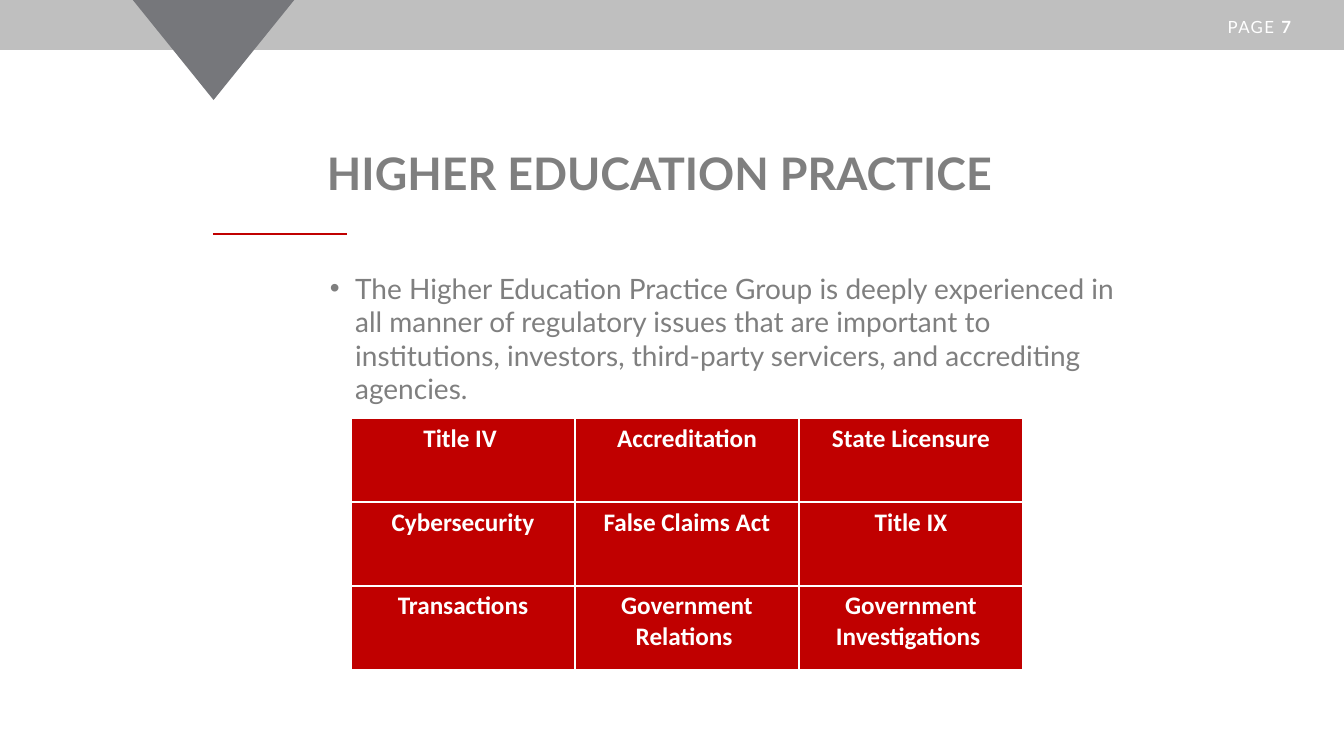
from lxml.etree import SubElement
from pptx import Presentation
from pptx.dml.color import RGBColor
from pptx.enum.shapes import MSO_CONNECTOR, MSO_SHAPE
from pptx.enum.text import MSO_ANCHOR, PP_ALIGN
from pptx.oxml.ns import qn
from pptx.util import Emu, Pt

WHITE = RGBColor(0xFF, 0xFF, 0xFF)
SILVER = RGBColor(0xBF, 0xBF, 0xBF)
SLATE = RGBColor(0x76, 0x77, 0x7B)
GREY = RGBColor(0x7F, 0x7F, 0x7F)
RED = RGBColor(0xC0, 0x00, 0x00)

TOPICS = [
    ["Title IV ", "Accreditation", "State Licensure"],
    ["Cybersecurity", "False Claims Act", "Title IX"],
    ["Transactions", "Government Relations ", "Government Investigations "],
]


def px(*nums):
    """Turn px, at 100.8 to the inch, into EMU."""
    return [Emu(round(num * 914400 / 100.8)) for num in nums]


class Deck:
    def __init__(self, wide, high):
        self.show = Presentation()
        self.show.slide_width, self.show.slide_height = px(wide, high)
        self.slide = self.show.slides.add_slide(self.show.slide_layouts[6])
        self.shapes = self.slide.shapes

    def style(self, font, color, **look):
        font.color.rgb = color
        for name, value in look.items():
            setattr(font, name, value)

    def shape(self, kind, box, color, turn=0):
        item = self.shapes.add_shape(kind, *px(*box))
        item.shadow.inherit = False
        item.fill.solid()
        item.fill.fore_color.rgb = color
        item.line.fill.background()
        item.rotation = turn

    def line(self, ends, color):
        item = self.shapes.add_connector(MSO_CONNECTOR.STRAIGHT, *px(*ends))
        item.line.color.rgb = color
        item.line.width = Pt(1)
        SubElement(item._element.spPr, qn("a:effectLst"))

    def text(self, box, words, color, pad=0, anchor=MSO_ANCHOR.TOP,
             align=PP_ALIGN.LEFT, gap=1.0, bullet=False, **look):
        """Add one paragraph in Lato and return it."""
        frame = self.shapes.add_textbox(*px(*box)).text_frame
        sides = dict.fromkeys(["left", "right", "top", "bottom"], 0)
        if pad:
            sides = {"left": 10, "right": 10, "top": 5, "bottom": 5}
        for side, inset in sides.items():
            setattr(frame, f"margin_{side}", px(inset)[0])
        frame.word_wrap = True
        frame.vertical_anchor = anchor
        para = frame.paragraphs[0]
        para.alignment = align
        para.line_spacing = gap
        if bullet:
            props = para._p.get_or_add_pPr()
            props.set("marL", "228600")
            props.set("indent", "-228600")
            SubElement(props, qn("a:buFont"), typeface="Arial")
            SubElement(props, qn("a:buChar"), char="•")
        run = para.add_run()
        run.text = words
        self.style(run.font, color, name="Lato", **look)
        return para

    def page(self, box, number):
        para = self.text(box, "PAGE ", WHITE, align=PP_ALIGN.RIGHT, size=Pt(12))
        run = para.add_run()
        run.text = number
        self.style(run.font, WHITE, name="Lato", size=Pt(12), bold=True)
        for part in para.runs:
            part.font._element.set("spc", "100")

    def cell(self, cell, words):
        props = cell._tc.get_or_add_tcPr()
        for side in "LRTB":
            edge = SubElement(props, qn(f"a:ln{side}"), w=str(Pt(1)))
            fill = SubElement(edge, qn("a:solidFill"))
            SubElement(fill, qn("a:srgbClr"), val=str(WHITE))
        cell.fill.solid()
        cell.fill.fore_color.rgb = RED
        para = cell.text_frame.paragraphs[0]
        para.alignment = PP_ALIGN.CENTER
        run = para.add_run()
        run.text = words
        self.style(run.font, WHITE, name="Calibri", size=Pt(18), bold=True)

    def table(self, box, rows):
        grid = self.shapes.add_table(len(rows), len(rows[0]), *px(*box)).table
        grid.first_row = grid.horz_banding = False
        for r, row in enumerate(rows):
            for c, words in enumerate(row):
                self.cell(grid.cell(r, c), words)


def main():
    deck = Deck(1344, 756)
    deck.shape(MSO_SHAPE.RECTANGLE, (0, -1, 1344, 51), SILVER)
    deck.page((1090, 17, 201, 20), "7")
    deck.shape(MSO_SHAPE.ISOSCELES_TRIANGLE, (132, -1, 163, 101), SLATE, 180)
    deck.line((213, 234, 347, 234), RED)
    deck.text(
        (320, 266, 809, 420),
        "The Higher Education Practice Group is deeply experienced in all "
        "manner of regulatory issues that are important to institutions, "
        "investors, third-party servicers, and accrediting agencies.",
        GREY, pad=1, bullet=True, size=Pt(20))
    deck.table((351, 418, 672, 252), TOPICS)
    deck.text((327, 152, 806, 48), "HIGHER EDUCATION PRACTICE", GREY,
              anchor=MSO_ANCHOR.MIDDLE, gap=0.9, size=Pt(32), bold=True)
    deck.show.save("out.pptx")


if __name__ == "__main__":
    main()
